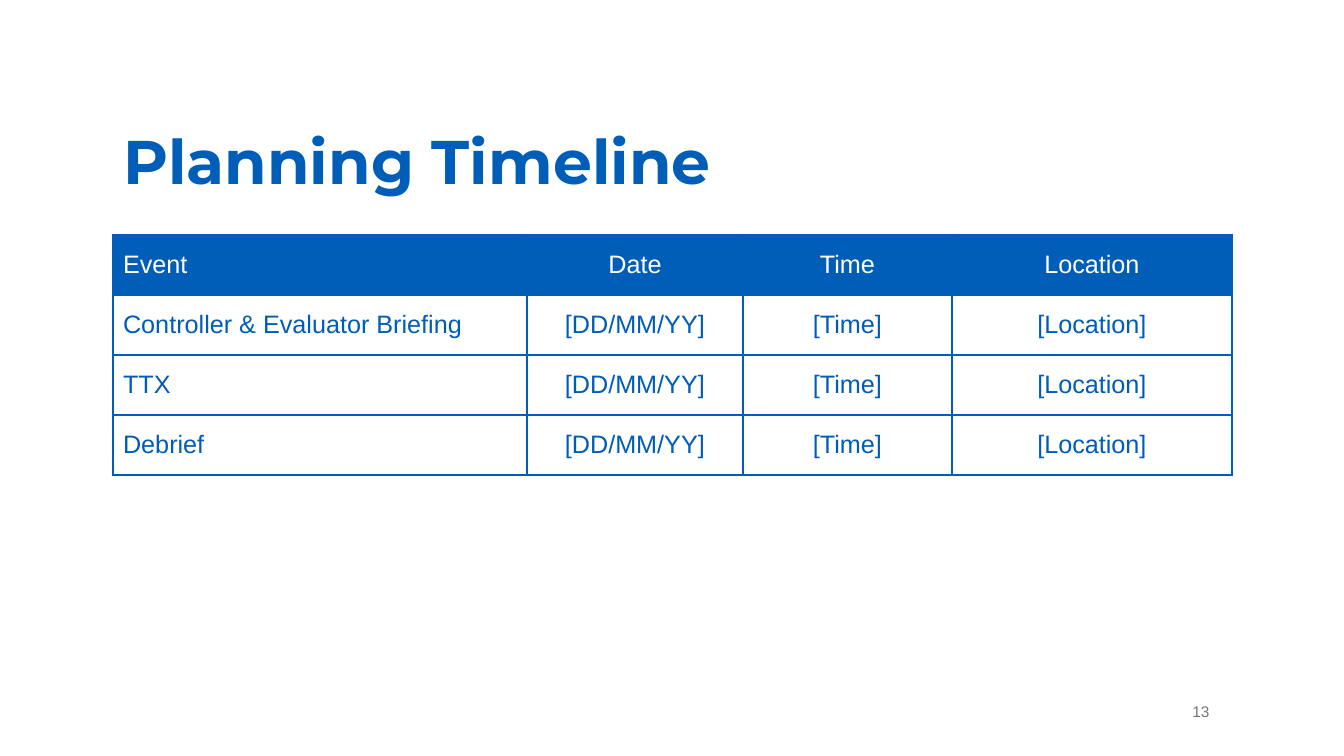
from lxml import etree
from pptx import Presentation
from pptx.dml.color import RGBColor
from pptx.enum.text import MSO_ANCHOR, MSO_AUTO_SIZE, PP_ALIGN
from pptx.oxml.ns import qn
from pptx.util import Pt

MIDDLE = MSO_ANCHOR.MIDDLE
NO_FIT = MSO_AUTO_SIZE.NONE
LEFT, CENTER = PP_ALIGN.LEFT, PP_ALIGN.CENTER

BLUE = RGBColor(0x00, 0x5E, 0xB8)
TEXT_BLUE = RGBColor(0x00, 0x5C, 0xB9)
WHITE = RGBColor(0xFF, 0xFF, 0xFF)
GRAY = RGBColor(0x77, 0x77, 0x7A)

PX_PER_INCH = 100.8
COLUMN_WIDTHS = (414, 216, 209, 280)
ROW_HEIGHT = 60
HEADINGS = ("Event", "Date", "Time", "Location")
EVENTS = ("Controller & Evaluator Briefing", "TTX", "Debrief")
PLACEHOLDERS = ("[DD/MM/YY]", "[Time]", "[Location]")


def px(length):
    """Turn px into EMU."""
    return round(length * 914400 / PX_PER_INCH)


def write(frame, text, font_name, size, color, align=LEFT, bold=False):
    """Set the text of a frame and format its only paragraph."""
    frame.text = text
    paragraph = frame.paragraphs[0]
    paragraph.alignment = align
    font = paragraph.runs[0].font
    font.name, font.size, font.bold = font_name, Pt(size), bold
    font.color.rgb = color


def place_title(slide, left, top, width, height):
    """Place the slide title in its box."""
    title = slide.shapes.title
    title.left, title.top, title.width, title.height = map(px, (left, top, width, height))
    frame = title.text_frame
    write(frame, "Planning Timeline", "Montserrat", 44, BLUE, bold=True)
    frame.paragraphs[0].line_spacing = 0.9
    frame.vertical_anchor = MIDDLE
    frame.word_wrap = True
    frame.auto_size = NO_FIT


def outline_cell(cell):
    """Give a cell blue borders on all four sides."""
    properties = cell._tc.get_or_add_tcPr()
    for index, side in enumerate(("a:lnL", "a:lnR", "a:lnT", "a:lnB")):
        border = etree.Element(qn(side), w=str(Pt(2.25)))
        fill = etree.SubElement(border, qn("a:solidFill"))
        etree.SubElement(fill, qn("a:srgbClr"), val=str(BLUE))
        properties.insert(index, border)


def add_timeline(slide, left, top):
    """Add the table of events from its top left corner."""
    rows = [HEADINGS] + [(event, *PLACEHOLDERS) for event in EVENTS]
    timeline = slide.shapes.add_table(
        len(rows), len(HEADINGS), px(left), px(top),
        px(sum(COLUMN_WIDTHS)), px(ROW_HEIGHT * len(rows))).table
    for column, width in zip(timeline.columns, COLUMN_WIDTHS):
        column.width = px(width)
    for row_index, row in enumerate(rows):
        fill, color = (WHITE, TEXT_BLUE) if row_index else (BLUE, WHITE)
        for column_index, text in enumerate(row):
            cell = timeline.cell(row_index, column_index)
            align = CENTER if column_index else LEFT
            write(cell.text_frame, text, "Arial", 18, color, align)
            cell.vertical_anchor = MIDDLE
            cell.fill.solid()
            cell.fill.fore_color.rgb = fill
            outline_cell(cell)


def add_page_number(slide, left, top, width, height):
    """Add the page number in its box."""
    box = slide.shapes.add_textbox(*map(px, (left, top, width, height)))
    frame = box.text_frame
    frame.word_wrap = True
    frame.vertical_anchor = MIDDLE
    write(frame, "13", "Arial", 11, GRAY, CENTER)


def main():
    """Build the planning timeline slide and save it."""
    deck = Presentation()
    deck.slide_width, deck.slide_height = px(1344), px(756)
    slide = deck.slides.add_slide(deck.slide_layouts.get_by_name("Title Only"))
    place_title(slide, 113, 92, 1159, 146)
    add_timeline(slide, 113, 235)
    add_page_number(slide, 1174, 691, 54, 41)
    deck.save("out.pptx")


if __name__ == "__main__":
    main()
